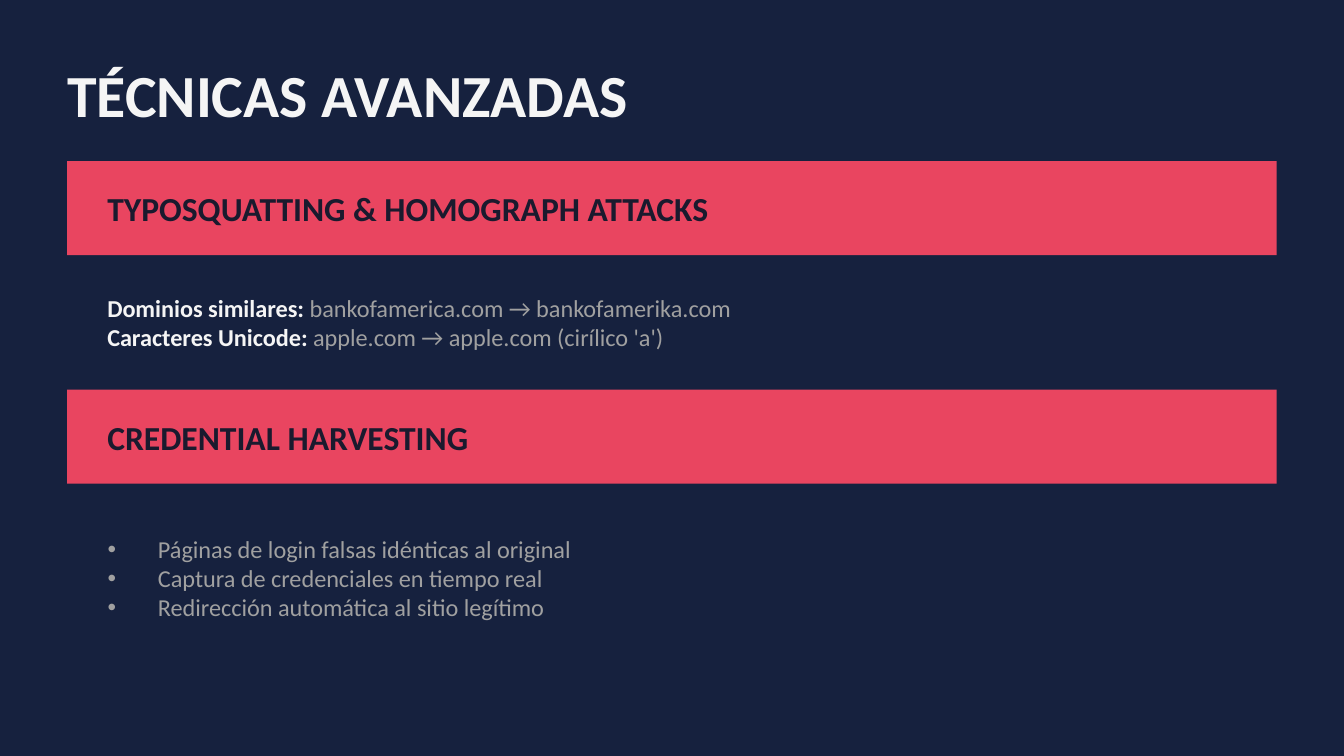
from pptx import Presentation
from pptx.dml.color import RGBColor
from pptx.enum.shapes import MSO_SHAPE
from pptx.enum.text import MSO_ANCHOR, MSO_AUTO_SIZE, PP_ALIGN
from pptx.oxml.ns import qn
from pptx.util import Pt
from lxml import etree

RECT = MSO_SHAPE.RECTANGLE
MIDDLE = MSO_ANCHOR.MIDDLE
NO_FIT = MSO_AUTO_SIZE.NONE
LEFT = PP_ALIGN.LEFT

PX = 11430
NAVY = RGBColor(0x16, 0x21, 0x3E)
RED = RGBColor(0xE9, 0x45, 0x60)
INK = RGBColor(0x1A, 0x1A, 0x2E)
WHITE = RGBColor(0xF5, 0xF5, 0xF5)
GRAY = RGBColor(0xA0, 0xA0, 0xA0)


def write(sp, lines, box, size, inset=8, bullet=False):
    sp.left, sp.top, sp.width, sp.height = [v * PX for v in box]
    tf = sp.text_frame
    tf.word_wrap = True
    tf.auto_size = NO_FIT
    tf.vertical_anchor = MIDDLE
    tf.margin_left = tf.margin_right = inset * PX
    tf.margin_top = tf.margin_bottom = inset * PX // 2
    for i, runs in enumerate(lines):
        p = tf.paragraphs[0] if i == 0 else tf.add_paragraph()
        p.alignment = LEFT
        p.space_before = Pt(0)
        if bullet:
            pPr = p._p.get_or_add_pPr()
            pPr.set("marL", str(30 * PX))
            pPr.set("indent", str(-30 * PX))
            etree.SubElement(pPr, qn("a:buChar")).set("char", "•")
        for text, color, bold in runs:
            r = p.add_run()
            r.text = text
            r.font.name = "Calibri"
            r.font.size = Pt(size)
            r.font.bold = bold
            r.font.color.rgb = color


prs = Presentation()
prs.slide_width = 800 * PX
prs.slide_height = 450 * PX
s = prs.slides.add_slide(prs.slide_layouts[1])
s.background.fill.solid()
s.background.fill.fore_color.rgb = NAVY

write(s.shapes.title, [[("TÉCNICAS AVANZADAS", WHITE, True)]],
      (40, 32, 720, 48), 32, inset=0)

for top, heading in [(96, "TYPOSQUATTING & HOMOGRAPH ATTACKS"),
                     (232, "CREDENTIAL HARVESTING")]:
    bar = s.shapes.add_shape(RECT, 40 * PX, top * PX, 720 * PX, 56 * PX)
    bar.shadow.inherit = False
    bar.fill.solid()
    bar.fill.fore_color.rgb = RED
    bar.line.fill.background()
    write(s.shapes.add_textbox(0, 0, 0, 0), [[(heading, INK, True)]],
          (56, top + 12, 688, 32), 18)

examples = [("Dominios similares: ", "bankofamerica.com → bankofamerika.com"),
            ("Caracteres Unicode: ", "apple.com → аpple.com (cirílico 'а')")]
write(s.shapes.add_textbox(0, 0, 0, 0),
      [[(label, WHITE, True), (text, GRAY, False)] for label, text in examples],
      (56, 168, 688, 48), 13)

steps = ["Páginas de login falsas idénticas al original",
         "Captura de credenciales en tiempo real",
         "Redirección automática al sitio legítimo"]
body = s.placeholders[1]
write(body, [[(step, GRAY, False)] for step in steps],
      (56, 304, 688, 80), 13, bullet=True)
body._element.getparent().append(body._element)

prs.save("out.pptx")
